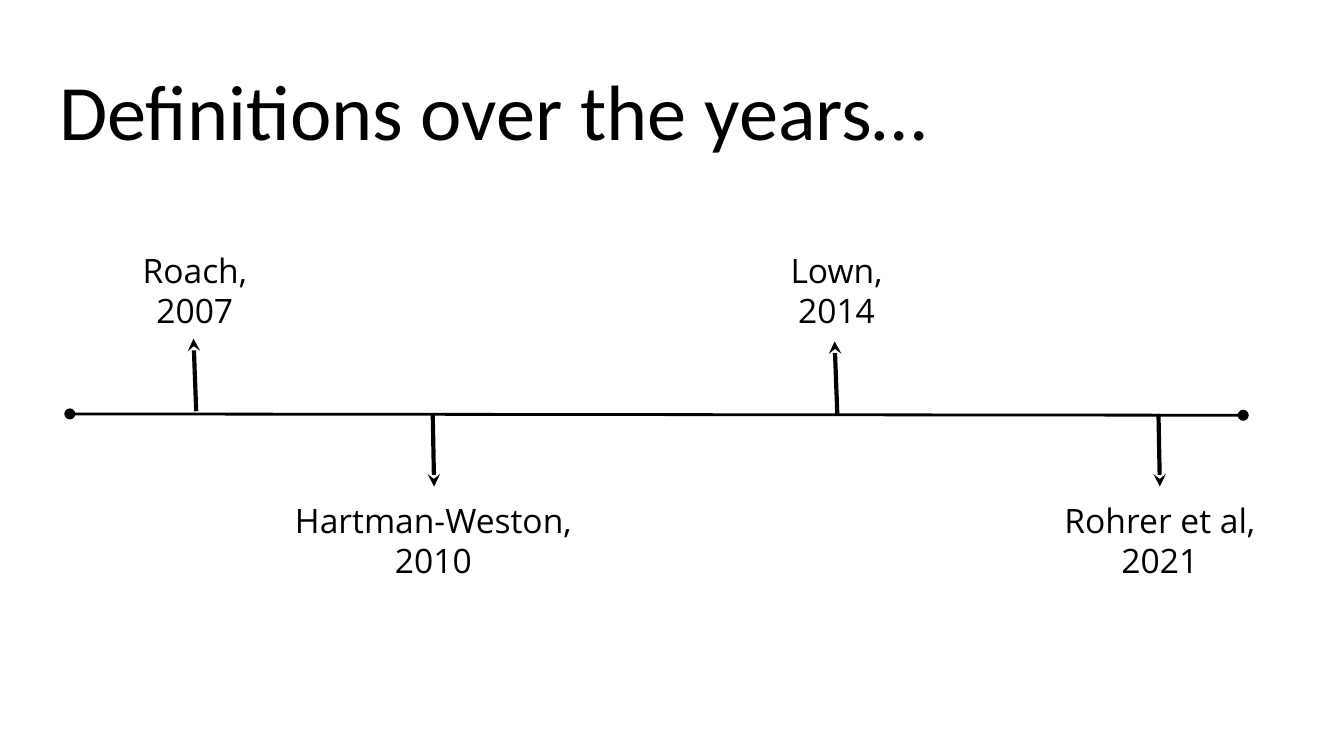
from dataclasses import dataclass

from lxml import etree
from pptx import Presentation
from pptx import util as u
from pptx.dml.color import RGBColor
from pptx.enum import shapes, text
from pptx.oxml import ns


@dataclass(frozen=True)
class Theme:
    ink: RGBColor = RGBColor(0, 0, 0)
    paper: RGBColor = RGBColor(255, 255, 255)
    head: str = "Calibri"
    body: str = "Open Sans"
    big: int = 42
    small: int = 18
    thin: float = 1.5
    thick: float = 2.25
    inset: float = 0.1


class Deck:
    """Holds the theme and the current slide."""

    def __init__(self, theme, wide, high):
        self.theme = theme
        self.prs = Presentation()
        self.prs.slide_width = u.Inches(wide)
        self.prs.slide_height = u.Inches(high)
        self.slide = self.prs.slides.add_slide(self.prs.slide_layouts[5])
        fill = self.slide.background.fill
        fill.solid()
        fill.fore_color.rgb = theme.paper

    def style(self, frame, font, size, align, anchor):
        frame.word_wrap = True
        frame.vertical_anchor = anchor
        gap = u.Inches(self.theme.inset)
        frame.margin_left = frame.margin_right = gap
        frame.margin_top = frame.margin_bottom = gap
        for para in frame.paragraphs:
            para.alignment = align
            for run in para.runs:
                run.font.name = font
                run.font.size = u.Pt(size)
                run.font.color.rgb = self.theme.ink

    def title(self, words, left, top, wide, high):
        box = self.slide.shapes.title
        box.left, box.top = u.Inches(left), u.Inches(top)
        box.width, box.height = u.Inches(wide), u.Inches(high)
        frame = box.text_frame
        frame.text = words
        frame.auto_size = text.MSO_AUTO_SIZE.NONE
        self.style(frame, self.theme.head, self.theme.big,
                   text.PP_ALIGN.LEFT, text.MSO_ANCHOR.BOTTOM)

    def label(self, words, left, top, wide, high):
        box = self.slide.shapes.add_textbox(
            *map(u.Inches, (left, top, wide, high)))
        frame = box.text_frame
        frame.text = words
        frame.auto_size = text.MSO_AUTO_SIZE.SHAPE_TO_FIT_TEXT
        self.style(frame, self.theme.body, self.theme.small,
                   text.PP_ALIGN.CENTER, text.MSO_ANCHOR.TOP)

    def line(self, start, end, width, **tips):
        """Draw a line; tips maps headEnd or tailEnd to an arrowhead type."""
        line = self.slide.shapes.add_connector(
            shapes.MSO_CONNECTOR.STRAIGHT, *map(u.Inches, (*start, *end)))
        line.line.color.rgb = self.theme.ink
        line.line.width = u.Pt(width)
        stroke = line.line._get_or_add_ln()
        for tag, kind in tips.items():
            etree.SubElement(stroke, ns.qn(f"a:{tag}"), type=kind)
        etree.SubElement(line._element.spPr, ns.qn("a:effectLst"))


WIDE = 10
HIGH = WIDE * 9 / 16
ABOVE, BELOW, TALL = 1.76, 3.62, 0.81

# Label, its left and width, arrow start on the axis, arrow tip
EVENTS = [
    ("Roach,\n2007", 0.8, 1.3, (1.46, 3.06), (1.44, 2.52)),
    ("Hartman-Weston, 2010", 2.01, 2.43, (3.22, 3.08), (3.23, 3.62)),
    ("Lown,\n2014", 5.76, 0.93, (6.23, 3.08), (6.21, 2.54)),
    ("Rohrer et al, 2021", 7.62, 2.02, (8.62, 3.08), (8.63, 3.62)),
]


def main():
    theme = Theme()
    deck = Deck(theme, WIDE, HIGH)
    deck.title("Definitions over the years…", 0.34, 0.35, 9.32, 0.91)
    deck.line((0.52, 3.08), (9.25, 3.09), theme.thin,
              headEnd="oval", tailEnd="oval")
    for words, left, wide, start, tip in EVENTS:
        top = ABOVE if tip[1] < start[1] else BELOW
        deck.line(start, tip, theme.thick, tailEnd="stealth")
        deck.label(words, left, top, wide, TALL)
    deck.prs.save("out.pptx")


if __name__ == "__main__":
    main()
